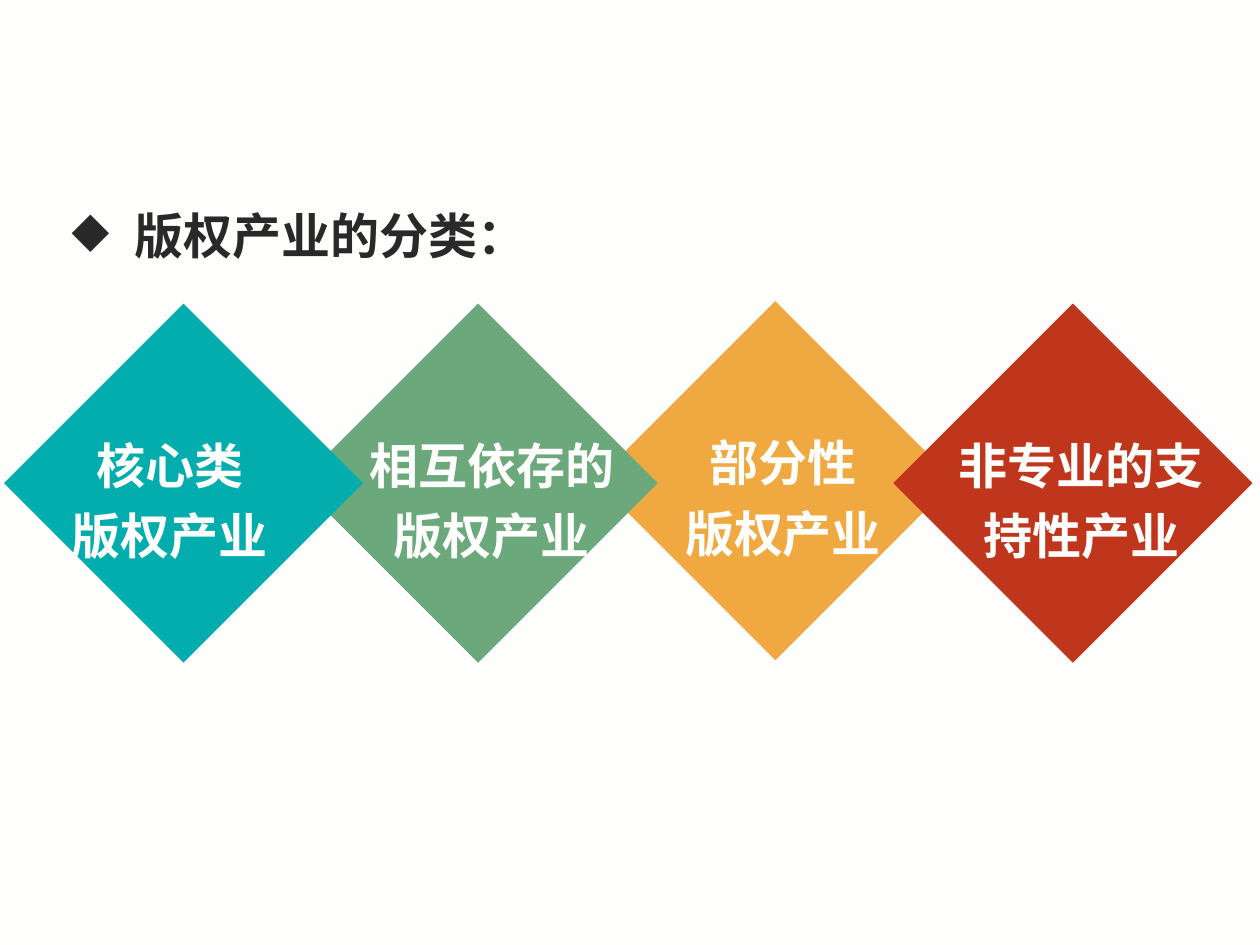
import pptx
import pptx.dml.color
import pptx.enum.shapes
import pptx.enum.text
import pptx.oxml
import pptx.oxml.ns
import pptx.util

Cm = pptx.util.Cm
RGBColor = pptx.dml.color.RGBColor
Align = pptx.enum.text.PP_ALIGN

PAPER = RGBColor(0xFE, 0xFE, 0xFC)
INK = RGBColor(0x29, 0x29, 0x29)
AMBER = RGBColor(0xF0, 0xA9, 0x41)
GREEN = RGBColor(0x6B, 0xA8, 0x7B)
TEAL = RGBColor(0x03, 0xAD, 0xAD)
RED = RGBColor(0xBF, 0x36, 0x1C)

SIDE = 7.24
DROP = 2.29
KINDS = [
    (AMBER, 12.01, 6.07, 13.26, 5.05, "部分性\n版权产业"),
    (GREEN, 6.02, 6.12, 6.88, 6.07, "相互依存的版权产业"),
    (TEAL, 0.08, 6.12, 0.08, 6.68, "核心类\n版权产业"),
    (RED, 18.01, 6.12, 18.95, 5.69, "非专业的支持性产业"),
]


def apply(item, form):
    for name, value in form.items():
        setattr(item, name, value)


class Deck:
    font = {"name": "Noto Sans CJK SC", "size": pptx.util.Pt(28), "bold": True}
    frame = {
        "word_wrap": True,
        "auto_size": pptx.enum.text.MSO_AUTO_SIZE.NONE,
        "vertical_anchor": pptx.enum.text.MSO_ANCHOR.TOP,
    }

    def __init__(self):
        self.show = pptx.Presentation()
        apply(self.show, {"slide_width": Cm(25.4), "slide_height": Cm(19.05)})
        self.slide = self.show.slides.add_slide(self.show.slide_layouts[5])
        fill = self.slide.background.fill
        fill.solid()
        fill.fore_color.rgb = PAPER

    def words(self, frame, text, color, align):
        apply(frame, self.frame)
        frame.text = text
        for para in frame.paragraphs:
            apply(para, {"alignment": align, "line_spacing": 1.2})
            for run in para.runs:
                apply(run.font, self.font)
                run.font.color.rgb = color
                east = pptx.oxml.parse_xml(
                    f'<a:ea {pptx.oxml.ns.nsdecls("a")} typeface="{self.font["name"]}"/>'
                )
                run.font._element.find(pptx.oxml.ns.qn("a:latin")).addnext(east)

    def title(self, text, left, top, width, height):
        head = self.slide.shapes.title
        apply(head, {"left": Cm(left), "top": Cm(top), "width": Cm(width), "height": Cm(height)})
        self.words(head.text_frame, text, INK, Align.JUSTIFY)
        props = head.text_frame.paragraphs[0]._p.get_or_add_pPr()
        props.set("marL", str(Cm(1.27)))
        props.set("indent", str(Cm(-1.27)))
        props.append(pptx.oxml.parse_xml(
            f'<a:buChar {pptx.oxml.ns.nsdecls("a")} char="◆"/>'
        ))

    def diamond(self, left, top, color):
        shape = self.slide.shapes.add_shape(
            pptx.enum.shapes.MSO_SHAPE.DIAMOND, Cm(left), Cm(top), Cm(SIDE), Cm(SIDE)
        )
        shape.shadow.inherit = False
        shape.fill.solid()
        shape.fill.fore_color.rgb = color
        shape.line.fill.background()

    def label(self, text, left, top, width):
        box = self.slide.shapes.add_textbox(Cm(left), Cm(top), Cm(width), Cm(2.95))
        self.words(box.text_frame, text, PAPER, Align.CENTER)


def main():
    deck = Deck()
    deck.title("版权产业的分类：", 1.19, 3.78, 24.2, 1.5)
    for color, left, top, start, width, text in KINDS:
        deck.diamond(left, top, color)
        deck.label(text, start, top + DROP, width)
    deck.show.save("out.pptx")


if __name__ == "__main__":
    main()
